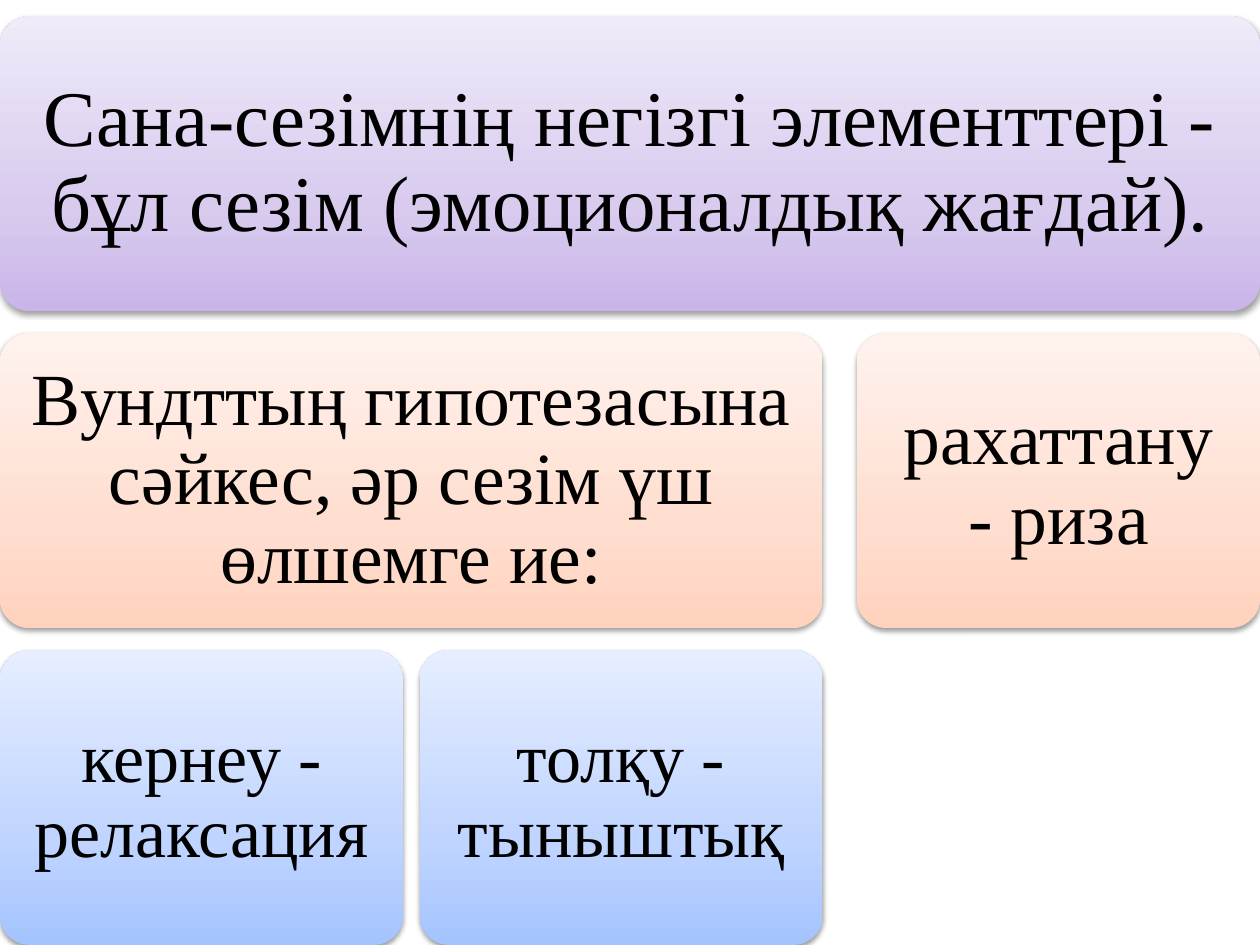
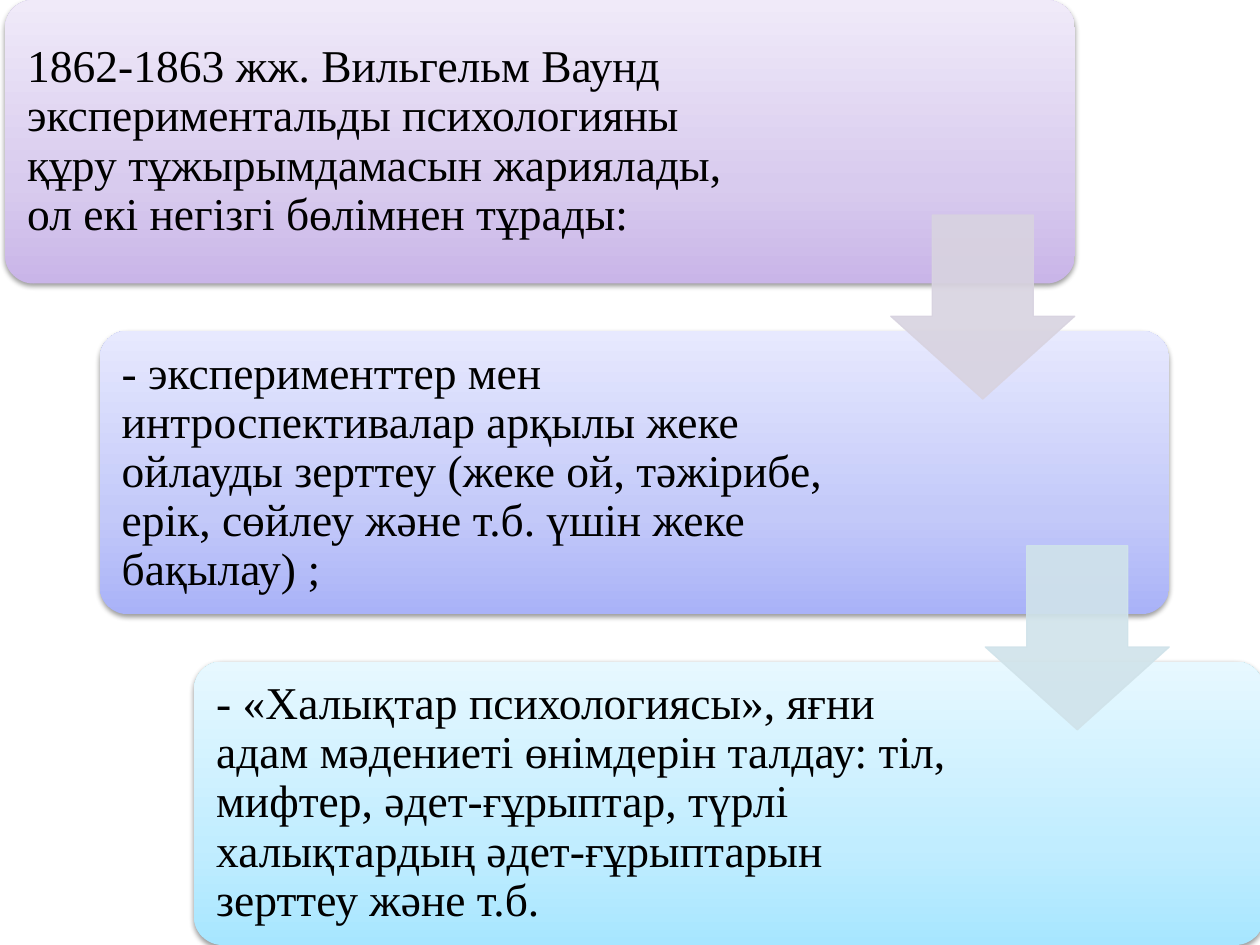
import pptx
import pptx.dml.color
import pptx.enum.shapes
import pptx.enum.text
import pptx.oxml.ns
import pptx.util
from lxml import etree

SHAPES = pptx.enum.shapes.MSO_SHAPE
ALIGN = pptx.enum.text.PP_ALIGN
WIDTH, HEIGHT = 10, 7.5
FONT = "Times New Roman"
BLACK = "000000"
# Gradient stops at 0, 35 and 100 %, running from bottom to top
STOPS = (0, 35, 100)
LILAC = ("C9B5E8", "D8CBEE", "F0EAF9")
PEACH = ("FFD2BD", "FFDED0", "FFF2ED")
BLUE = ("A4C4FF", "BFD4FF", "E6EEFF")
PERIWINKLE = ("A9B2F8", "C3C9F9", "E7E9FE")
SKY = ("A7E6FF", "C1EDFF", "E7F8FF")


def rgb(value):
    return pptx.dml.color.RGBColor.from_string(value)


def add_xml(parent, tag, **attributes):
    child = etree.SubElement(parent, pptx.oxml.ns.qn(tag))
    for name, value in attributes.items():
        child.set(name, str(value))
    return child


def add_color(parent, color, alpha=None):
    node = add_xml(parent, "a:srgbClr", val=color)
    if alpha is not None:
        add_xml(node, "a:alpha", val=alpha * 1000)


def add_preset(s, kind, left, top, width, height, adjustments):
    box = [pptx.util.Inches(v) for v in (left, top, width, height)]
    sp = s.shapes.add_shape(kind, *box)
    for i, value in enumerate(adjustments):
        sp.adjustments[i] = value
    sp.shadow.inherit = False
    return sp


def fill_gradient(sp, colors):
    sp.fill.gradient()
    sp.fill.gradient_angle = 90
    stops = sp.element.spPr.find(".//" + pptx.oxml.ns.qn("a:gsLst"))
    for stop in list(stops):
        stops.remove(stop)
    for position, color in zip(STOPS, colors):
        add_color(add_xml(stops, "a:gs", pos=position * 1000), color)


def add_shadow(sp):
    effects = sp.element.spPr.find(pptx.oxml.ns.qn("a:effectLst"))
    shadow = add_xml(effects, "a:outerShdw", blurRad=pptx.util.Pt(3.1),
                     dist=pptx.util.Pt(1.6), dir=90 * 60000, rotWithShape=0)
    add_color(shadow, BLACK, alpha=38)


def write_text(sp, text, size, align=ALIGN.CENTER, inset=0.17, right=None):
    tf = sp.text_frame
    tf.word_wrap = True
    tf.vertical_anchor = pptx.enum.text.MSO_ANCHOR.MIDDLE
    tf.margin_left = tf.margin_top = tf.margin_bottom = pptx.util.Inches(inset)
    tf.margin_right = pptx.util.Inches(inset if right is None else right)
    p = tf.paragraphs[0]
    p.alignment = align
    p.line_spacing = 0.9
    r = p.add_run()
    r.text = text
    r.font.name = FONT
    r.font.size = pptx.util.Pt(size)
    r.font.color.rgb = rgb(BLACK)


def add_card(s, left, top, width, height, colors, text, **text_format):
    sp = add_preset(s, SHAPES.ROUNDED_RECTANGLE, left, top, width, height, [0.1])
    fill_gradient(sp, colors)
    sp.line.fill.background()
    add_shadow(sp)
    write_text(sp, text, **text_format)


def add_step_arrow(s, right, middle, color):
    size = 1.46
    sp = add_preset(s, SHAPES.DOWN_ARROW, right - size, middle - size / 2,
                    size, size, [0.55, 0.45])
    sp.fill.solid()
    sp.fill.fore_color.rgb = rgb(color)
    sp.line.color.rgb = rgb(color)
    sp.line.width = pptx.util.Pt(0.75)
    for node in sp.element.spPr.iter(pptx.oxml.ns.qn("a:srgbClr")):
        add_xml(node, "a:alpha", val=90000)


def build_feeling_hierarchy(s):
    card_w, card_h = 3.2, 2.34
    columns = (0, 3.33, WIDTH - card_w)
    first_top = 0.13
    pitch = (HEIGHT - card_h - first_top) / 2
    cards = [  # row, first column, last column, colours, size, inset, text
        (0, 0, 2, LILAC, 45, 0.19,
         "Сана-сезімнің негізгі элементтері - бұл сезім (эмоционалдық жағдай)."),
        (1, 0, 1, PEACH, 42, 0.17,
         "Вундттың гипотезасына сәйкес, әр сезім үш өлшемге ие:"),
        (2, 0, 0, BLUE, 40, 0.17, "кернеу - релаксация"),
        (2, 1, 1, BLUE, 40, 0.17, "толқу - тыныштық"),
        (1, 2, 2, PEACH, 42, 0.17, "рахаттану - риза"),
    ]
    for row, first, last, colors, size, inset, text in cards:
        add_card(s, columns[first], first_top + row * pitch,
                 columns[last] + card_w - columns[first], card_h,
                 colors, text, size=size, inset=inset)


def build_concept_steps(s):
    card_w, card_h = 8.49, 2.25
    first_left, shift = 0.04, 0.75
    pitch = (HEIGHT - card_h) / 2
    steps = [
        (LILAC, "1862-1863 жж. Вильгельм Ваунд экспериментальды психологияны "
                "құру тұжырымдамасын жариялады, ол екі негізгі бөлімнен тұрады:"),
        (PERIWINKLE, "- эксперименттер мен интроспективалар арқылы жеке ойлауды "
                     "зерттеу (жеке ой, тәжірибе, ерік, сөйлеу және т.б. үшін "
                     "жеке бақылау) ;"),
        (SKY, "- «Халықтар психологиясы», яғни адам мәдениеті өнімдерін талдау: "
              "тіл, мифтер, әдет-ғұрыптар, түрлі халықтардың әдет-ғұрыптарын "
              "зерттеу және т.б."),
    ]
    for i, (colors, text) in enumerate(steps):
        add_card(s, first_left + i * shift, i * pitch, card_w, card_h, colors,
                 text, size=26, align=ALIGN.LEFT, inset=0.11, right=2.4)
    for i, color in enumerate(("D8D3E0", "D0E3EA")):
        add_step_arrow(s, first_left + i * shift + card_w,
                       i * pitch + (card_h + pitch) / 2, color)


def main():
    prs = pptx.Presentation()
    prs.slide_width = pptx.util.Inches(WIDTH)
    prs.slide_height = pptx.util.Inches(HEIGHT)
    blank = prs.slide_layouts[6]
    for build in (build_feeling_hierarchy, build_concept_steps):
        build(prs.slides.add_slide(blank))
    prs.save("out.pptx")


if __name__ == "__main__":
    main()
